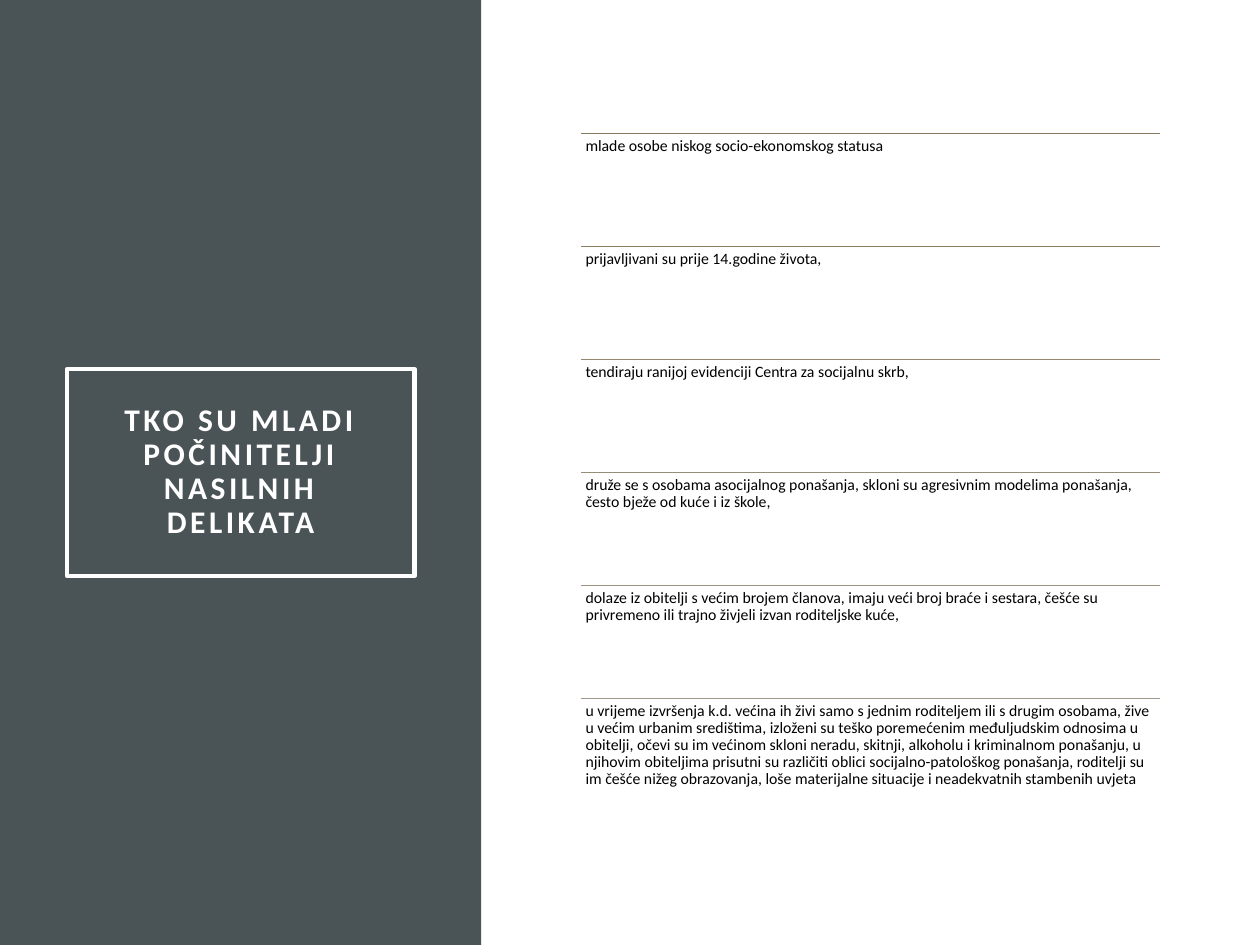
import lxml.etree
import pptx
import pptx.dml.color
import pptx.enum.shapes
import pptx.enum.text
import pptx.oxml.ns
import pptx.util

Pt = pptx.util.Pt
RGBColor = pptx.dml.color.RGBColor
SHAPES = pptx.enum.shapes.MSO_SHAPE
ANCHOR = pptx.enum.text.MSO_ANCHOR
ALIGN = pptx.enum.text.PP_ALIGN

SLATE = RGBColor(0x4A, 0x53, 0x56)
WHITE = RGBColor(0xFF, 0xFF, 0xFF)
BLACK = RGBColor(0x00, 0x00, 0x00)
RULE_COLORS = [
    RGBColor(0x87, 0x79, 0x5D),
    RGBColor(0x8D, 0x7F, 0x65),
    RGBColor(0x93, 0x86, 0x6E),
    RGBColor(0x97, 0x8C, 0x78),
    RGBColor(0x9B, 0x92, 0x82),
    RGBColor(0xA0, 0x98, 0x8C),
]

TITLE = "TKO SU MLADI POČINITELJI NASILNIH DELIKATA"
TRAITS = [
    "mlade osobe niskog socio-ekonomskog statusa",
    "prijavljivani su prije 14.godine života,",
    "tendiraju ranijoj evidenciji Centra za socijalnu skrb,",
    "druže se s osobama asocijalnog ponašanja, skloni su agresivnim modelima "
    "ponašanja, često bježe od kuće i iz škole,",
    "dolaze iz obitelji s većim brojem članova, imaju veći broj braće i sestara, "
    "češće su privremeno ili trajno živjeli izvan roditeljske kuće,",
    "u vrijeme izvršenja k.d. većina ih živi samo s jednim roditeljem ili s drugim "
    "osobama, žive u većim urbanim središtima, izloženi su teško poremećenim "
    "međuljudskim odnosima u obitelji, očevi su im većinom skloni neradu, skitnji, "
    "alkoholu i kriminalnom ponašanju, u njihovim obiteljima prisutni su različiti "
    "oblici socijalno-patološkog ponašanja, roditelji su im češće nižeg obrazovanja, "
    "loše materijalne situacije i neadekvatnih stambenih uvjeta",
]

TITLE_FONT = {"name": "Calibri", "size": Pt(18), "bold": True}
TRAIT_FONT = {"name": "Calibri", "size": Pt(9), "bold": False}


def write_text(shape, text, font, color, inset, anchor, align):
    """Fill a shape with one formatted paragraph and return its run."""
    frame = shape.text_frame
    frame_format = {"word_wrap": True, "vertical_anchor": anchor}
    for side in ("left", "top", "right", "bottom"):
        frame_format[f"margin_{side}"] = inset
    for name, value in frame_format.items():
        setattr(frame, name, value)
    para = frame.paragraphs[0]
    para.alignment = align
    para.line_spacing = 0.9
    span = para.add_run()
    span.text = text
    for name, value in font.items():
        setattr(span.font, name, value)
    span.font.color.rgb = color
    return span


def add_side_panel(page, left, top, width, height):
    """Dark panel down the left side of the page."""
    panel = page.shapes.add_shape(SHAPES.RECTANGLE, left, top, width, height)
    panel.shadow.inherit = False
    panel.fill.solid()
    panel.fill.fore_color.rgb = SLATE
    panel.line.fill.background()


def add_title(page, left, top, width, height):
    """Framed title with widely spaced letters."""
    box = page.shapes.add_shape(SHAPES.RECTANGLE, left, top, width, height)
    box.shadow.inherit = False
    box.fill.background()
    box.line.color.rgb = WHITE
    box.line.width = Pt(2.5)
    span = write_text(box, TITLE, TITLE_FONT, WHITE, Pt(14.4),
                      ANCHOR.MIDDLE, ALIGN.CENTER)
    span.font._element.set("spc", "200")


def add_rule(page, left, top, width, color):
    """Thin horizontal line above a list row."""
    rule = page.shapes.add_connector(
        pptx.enum.shapes.MSO_CONNECTOR.STRAIGHT, left, top, left + width, top)
    rule.line.color.rgb = color
    rule.line.width = Pt(0.5)
    lxml.etree.SubElement(rule._element.spPr, pptx.oxml.ns.qn("a:effectLst"))


def add_trait_list(page, left, top, width, height):
    """Equal rows, each with a rule on top and its text below."""
    row_height = height // len(TRAITS)
    for index, (trait, color) in enumerate(zip(TRAITS, RULE_COLORS)):
        row_top = top + index * row_height
        add_rule(page, left, row_top, width, color)
        box = page.shapes.add_textbox(left, row_top, width, row_height)
        write_text(box, trait, TRAIT_FONT, BLACK, Pt(2.7),
                   ANCHOR.TOP, ALIGN.LEFT)


def main():
    deck = pptx.Presentation()
    deck.slide_width = Pt(720)
    deck.slide_height = Pt(540)
    page = deck.slides.add_slide(deck.slide_layouts[6])
    add_side_panel(page, Pt(0), Pt(0), Pt(275), Pt(540))
    add_title(page, Pt(38.2), Pt(211), Pt(198.7), Pt(118))
    add_trait_list(page, Pt(331.9), Pt(76.2), Pt(331.2), Pt(387.4))
    deck.save("out.pptx")


if __name__ == "__main__":
    main()
